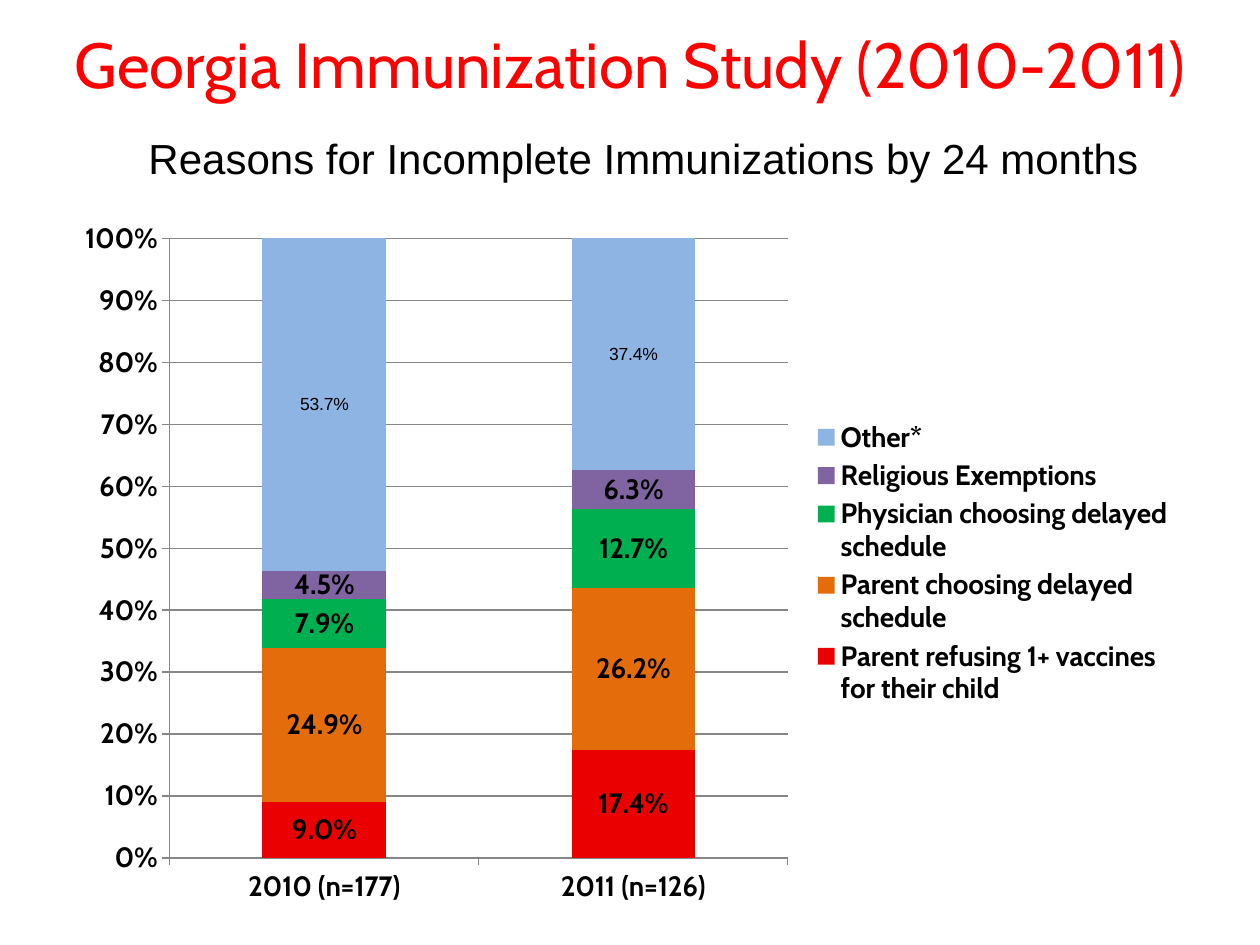
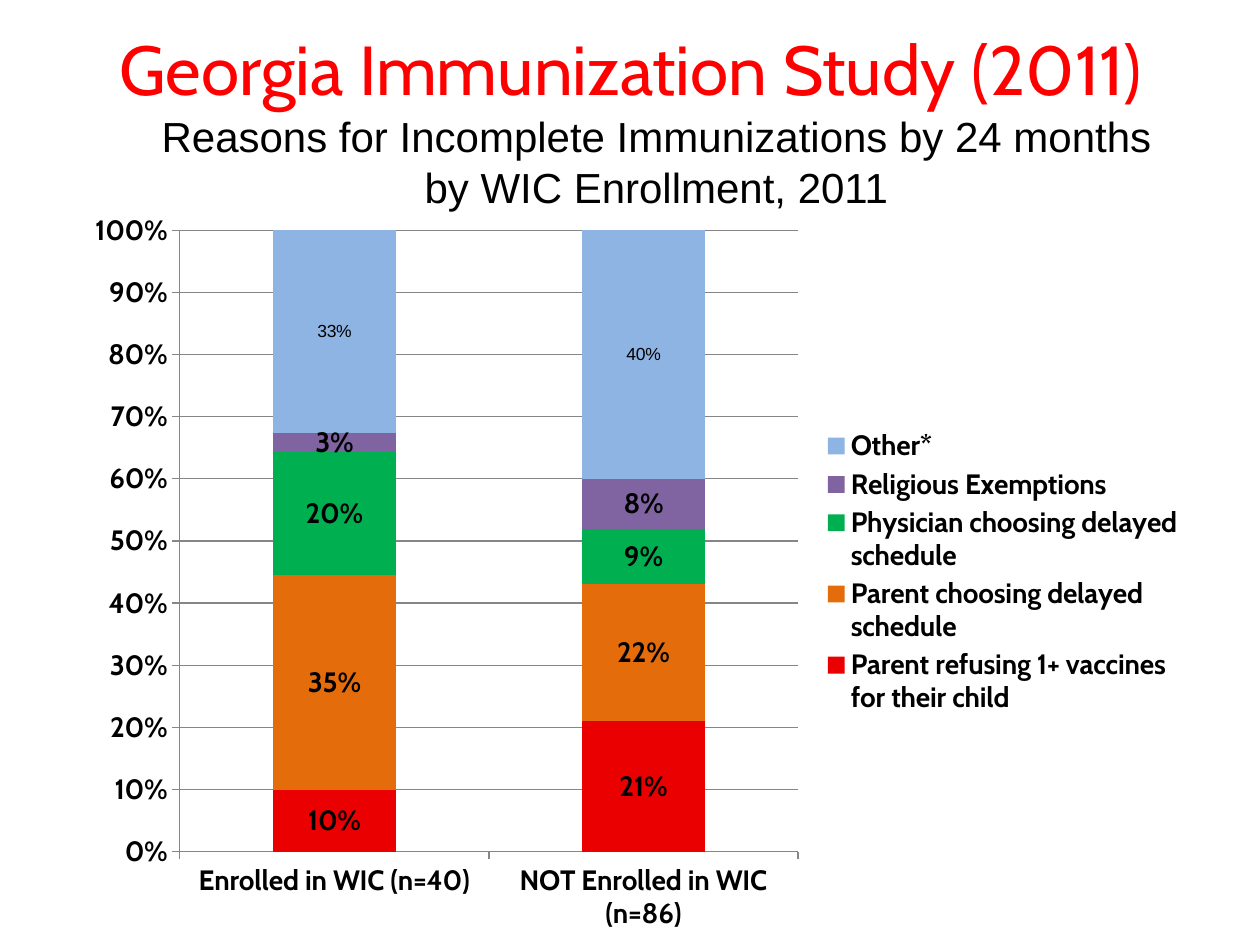
from lxml import etree
from pptx import Presentation
from pptx.chart.data import CategoryChartData
from pptx.dml.color import RGBColor
from pptx.enum import chart as charts, text
from pptx.util import Inches, Pt

BLACK, RED, GRID = "000000", "FF0000", "868686"
HEAD_FONT, BODY_FONT = "Cabin", "Arial"
REASONS = {
    "Parent refusing 1+ vaccines for their child": "EA0000",
    "Parent choosing delayed schedule": "E46C0A",
    "Physician choosing delayed schedule": "00B050",
    "Religious Exemptions": "8064A2",
    "Other*": "8EB4E3",
}


def rgb(value):
    return RGBColor.from_string(value)


def style_font(font, name, size, color, bold=False):
    font.name, font.size, font.bold = name, Pt(size), bold
    font.color.rgb = rgb(color)


def place_plot(chart, x, y, w, h):
    """Fix the inner plot area, given as fractions of the chart."""
    area = chart.plots[0]._element.getparent()
    ns = area.nsmap["c"]
    for old in area.findall(f"{{{ns}}}layout"):
        area.remove(old)
    layout = etree.Element(f"{{{ns}}}layout")
    manual = etree.SubElement(layout, f"{{{ns}}}manualLayout")
    settings = dict(layoutTarget="inner", xMode="edge", yMode="edge",
                    x=x, y=y, w=w, h=h)
    for tag, value in settings.items():
        etree.SubElement(manual, f"{{{ns}}}{tag}").set("val", str(value))
    area.insert(0, layout)


class Deck:
    def __init__(self):
        self.prs = Presentation()
        self.prs.slide_width, self.prs.slide_height = Inches(10), Inches(7.5)
        self.slide = None

    def add_slide(self, title, size, spacing=1.0):
        self.slide = self.prs.slides.add_slide(self.prs.slide_layouts[5])
        sp = self.slide.shapes.title
        sp.left, sp.top = Inches(0.17), Inches(0)
        sp.width, sp.height = Inches(9.67), Inches(1.08)
        tf = sp.text_frame
        tf.text = title
        tf.auto_size = text.MSO_AUTO_SIZE.NONE
        tf.vertical_anchor = text.MSO_ANCHOR.MIDDLE
        p = tf.paragraphs[0]
        p.alignment, p.line_spacing = text.PP_ALIGN.CENTER, spacing
        style_font(p.runs[0].font, HEAD_FONT, size, RED)

    def subtitle(self, words, x, y, height, align=text.PP_ALIGN.LEFT):
        sp = self.slide.shapes.add_textbox(
            Inches(x), Inches(y), Inches(8.08), Inches(height))
        tf = sp.text_frame
        tf.word_wrap = True
        tf.text = words
        p = tf.paragraphs[0]
        p.alignment = align
        style_font(p.runs[0].font, BODY_FONT, 24, BLACK)

    def reasons_chart(self, categories, rows, label_format, box, plot_y, plot_h):
        data = CategoryChartData()
        data.categories = categories
        for reason, values in zip(REASONS, rows):
            data.add_series(reason, values)
        chart = self.slide.shapes.add_chart(
            charts.XL_CHART_TYPE.COLUMN_STACKED_100,
            *map(Inches, box), data).chart
        chart.has_title = False
        style_font(chart.font, HEAD_FONT, 16, BLACK, bold=True)
        chart.has_legend = True
        chart.legend.position = charts.XL_LEGEND_POSITION.RIGHT
        chart.legend.include_in_layout = False
        plot = chart.plots[0]
        plot.gap_width, plot.overlap = 150, 100
        plot.vary_by_categories = False
        place_plot(chart, 0.095, plot_y, 0.55, plot_h)
        self.style_axes(chart)
        for series in plot.series:
            self.style_series(series, label_format)

    def style_axes(self, chart):
        axis = chart.value_axis
        axis.minimum_scale, axis.maximum_scale, axis.major_unit = 0, 1, 0.1
        axis.tick_labels.number_format = "0%"
        axis.tick_labels.number_format_is_linked = False
        axis.has_major_gridlines = True
        for part in (axis, chart.category_axis, axis.major_gridlines):
            part.format.line.color.rgb = rgb(GRID)
            part.format.line.width = Pt(0.75)

    def style_series(self, series, label_format):
        series.format.fill.solid()
        series.format.fill.fore_color.rgb = rgb(REASONS[series.name])
        labels = series.data_labels
        labels.show_value = True
        labels.number_format = label_format
        labels.number_format_is_linked = False
        if series.name == "Other*":
            style_font(labels.font, BODY_FONT, 10, BLACK)
        else:
            style_font(labels.font, HEAD_FONT, 16, BLACK, bold=True)


def main():
    deck = Deck()
    deck.add_slide("Georgia Immunization Study (2010-2011)", 36.3, 0.9)
    deck.reasons_chart(
        ["2010 (n=177)", "2011 (n=126)"],
        [(0.09, 0.174), (0.249, 0.262), (0.079, 0.127),
         (0.045, 0.063), (0.537, 0.374)],
        "0.0%", (0.5, 1.65, 8.92, 5.64), 0.043, 0.872)
    deck.subtitle("Reasons for Incomplete Immunizations by 24 months",
                  1.08, 1, 0.5)

    deck.add_slide("Georgia Immunization Study (2011)", 39.6)
    deck.reasons_chart(
        ["Enrolled in WIC (n=40)", "NOT Enrolled in WIC (n=86)"],
        [(0.1, 0.21), (0.35, 0.22), (0.2, 0.09), (0.03, 0.08), (0.33, 0.4)],
        "0%", (0.58, 1.58, 8.92, 5.92), 0.042, 0.833)
    deck.subtitle("Reasons for Incomplete Immunizations by 24 months "
                  "by WIC Enrollment, 2011",
                  1.17, 0.83, 0.91, text.PP_ALIGN.CENTER)
    deck.prs.save("out.pptx")


if __name__ == "__main__":
    main()
